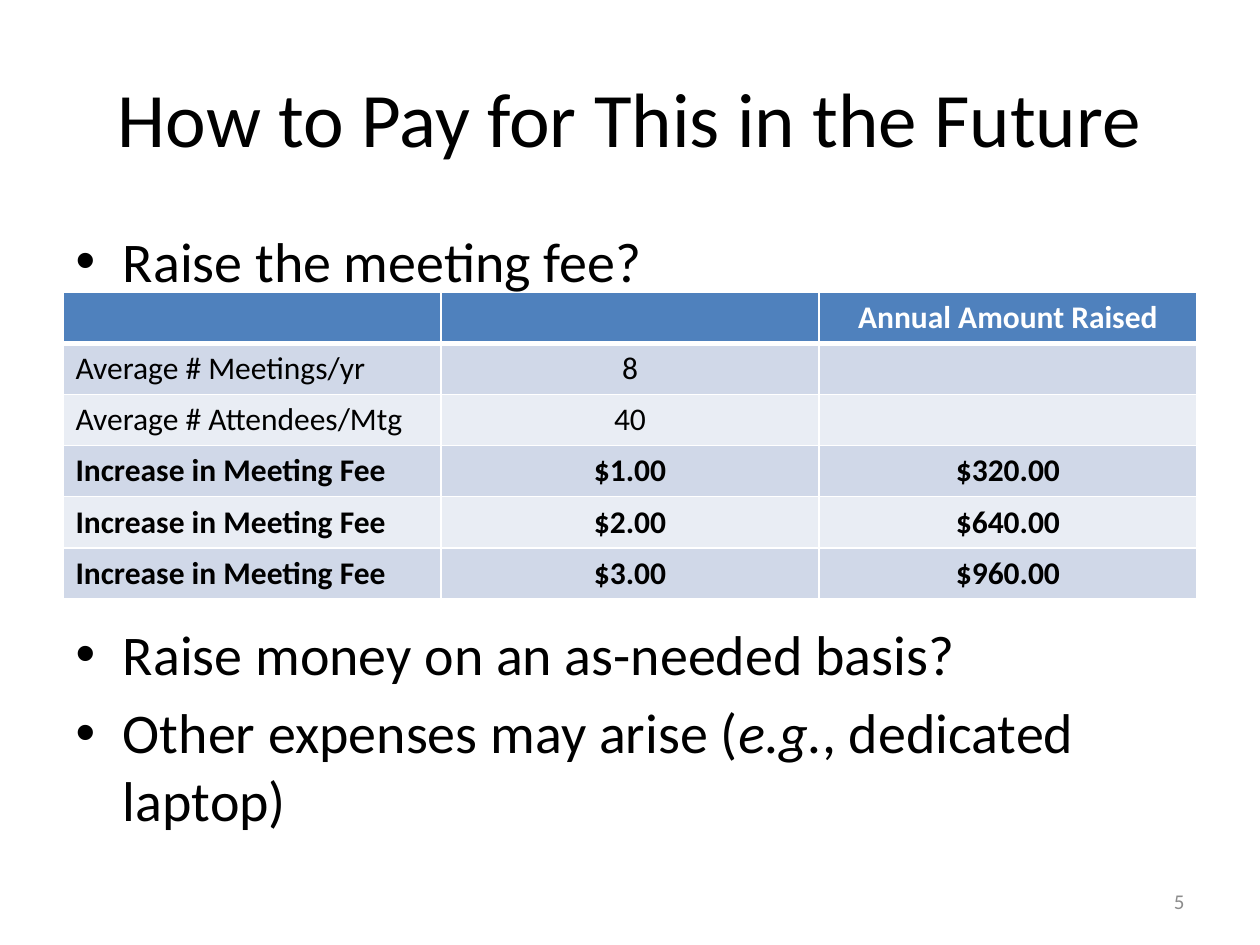
from dataclasses import dataclass

from lxml import etree
from pptx import Presentation, util as u
from pptx.dml.color import RGBColor
from pptx.enum import text
from pptx.oxml.ns import qn

TITLE = "How to Pay for This in the Future"
BULLETS = [
    (["Raise the meeting fee?"], None),
    (["Raise money on an as-needed basis?"], 186),
    (["Other expenses may arise (", "e.g.", ", dedicated laptop)"], None),
]
ITALIC_TEXT = "e.g."
FEE_ROWS = [
    ("", "", "Annual Amount Raised"),
    ("Average # Meetings/yr", "8", ""),
    ("Average # Attendees/Mtg", "40", ""),
    ("Increase in Meeting Fee", "$1.00", "$320.00"),
    ("Increase in Meeting Fee", "$2.00", "$640.00"),
    ("Increase in Meeting Fee", "$3.00", "$960.00"),
]
PLAIN_ROWS = (1, 2)
PAGE_NUMBER = "5"


@dataclass(frozen=True)
class Theme:
    font: str = "Calibri"
    title_size: int = 44
    body_size: int = 32
    table_size: int = 18
    number_size: int = 12
    ink: str = "000000"
    white: str = "FFFFFF"
    muted: str = "8C8C8C"
    header: str = "4F81BD"
    bands: tuple = ("E9EDF4", "D0D8E8")


THEME = Theme()


def place(shape, left, top, width, height):
    shape.left, shape.top = u.Inches(left), u.Inches(top)
    shape.width, shape.height = u.Inches(width), u.Inches(height)


def style(run, size, color, bold=False, italic=False):
    run.font.name = THEME.font
    run.font.size = u.Pt(size)
    run.font.color.rgb = RGBColor.from_string(color)
    run.font.bold = bold
    run.font.italic = italic


def add_border(cell, side, points):
    line = etree.SubElement(cell._tc.get_or_add_tcPr(), qn(f"a:ln{side}"), w=str(u.Pt(points)))
    fill = etree.SubElement(line, qn("a:solidFill"))
    etree.SubElement(fill, qn("a:srgbClr"), val=THEME.white)


def add_title(slide):
    title = slide.shapes.title
    place(title, 0.5, 0.3, 9, 1.25)
    title.text_frame.text = TITLE
    title.text_frame.vertical_anchor = text.MSO_ANCHOR.MIDDLE
    paragraph = title.text_frame.paragraphs[0]
    paragraph.alignment = text.PP_ALIGN.CENTER
    style(paragraph.runs[0], THEME.title_size, THEME.ink)


def add_bullets(slide):
    body = slide.placeholders[1]
    place(body, 0.5, 1.75, 9, 4.95)
    frame = body.text_frame
    frame.auto_size = text.MSO_AUTO_SIZE.NONE
    for index, (parts, gap) in enumerate(BULLETS):
        paragraph = frame.add_paragraph() if index else frame.paragraphs[0]
        if gap:
            paragraph.space_before = u.Pt(gap)
        for part in parts:
            run = paragraph.add_run()
            run.text = part
            style(run, THEME.body_size, THEME.ink, italic=part == ITALIC_TEXT)


def add_fee_table(slide):
    table = slide.shapes.add_table(
        len(FEE_ROWS), len(FEE_ROWS[0]),
        u.Inches(0.5), u.Inches(2.32), u.Inches(9), u.Inches(2.43),
    ).table
    for row, values in enumerate(FEE_ROWS):
        for column, value in enumerate(values):
            cell = table.cell(row, column)
            borders = {"L": 1, "R": 1, "T": 3 if row == 1 else 1, "B": 1 if row else 3}
            for side, points in borders.items():
                add_border(cell, side, points)
            cell.fill.solid()
            fill = THEME.bands[row % 2] if row else THEME.header
            cell.fill.fore_color.rgb = RGBColor.from_string(fill)
            cell.text_frame.text = value
            paragraph = cell.text_frame.paragraphs[0]
            paragraph.alignment = text.PP_ALIGN.CENTER if column else text.PP_ALIGN.LEFT
            paragraph.font.size = u.Pt(THEME.table_size)
            for run in paragraph.runs:
                style(run, THEME.table_size, THEME.ink if row else THEME.white,
                      bold=row not in PLAIN_ROWS)


def add_page_number(slide):
    box = slide.shapes.add_textbox(u.Inches(7.17), u.Inches(6.95), u.Inches(2.33), u.Inches(0.4))
    frame = box.text_frame
    frame.word_wrap = True
    frame.vertical_anchor = text.MSO_ANCHOR.MIDDLE
    frame.text = PAGE_NUMBER
    paragraph = frame.paragraphs[0]
    paragraph.alignment = text.PP_ALIGN.RIGHT
    style(paragraph.runs[0], THEME.number_size, THEME.muted)


def main():
    presentation = Presentation()
    presentation.slide_width, presentation.slide_height = u.Inches(10), u.Inches(7.5)
    slide = presentation.slides.add_slide(presentation.slide_layouts[1])
    add_title(slide)
    add_bullets(slide)
    add_fee_table(slide)
    add_page_number(slide)
    presentation.save("out.pptx")


if __name__ == "__main__":
    main()
